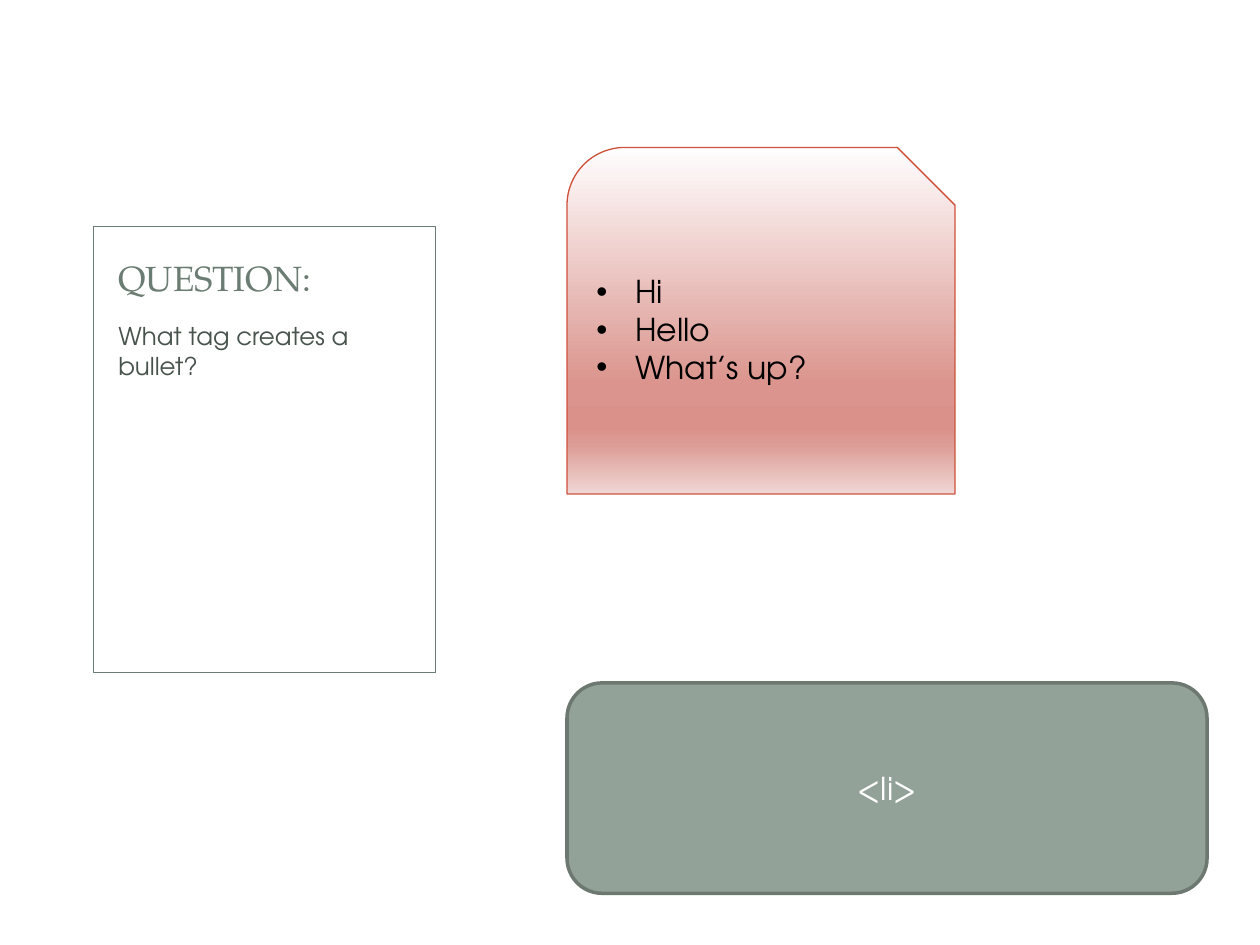
from lxml import etree
from pptx import Presentation
from pptx import util as u
from pptx.dml.color import RGBColor
from pptx.enum import shapes, text
from pptx.oxml.ns import qn

SANS, SERIF = "TeX Gyre Adventor", "TeX Gyre Pagella"
SHAPE, ALIGN, ANCHOR = shapes.MSO_SHAPE, text.PP_ALIGN, text.MSO_ANCHOR


def rgb(value):
    return RGBColor.from_string(value)


def place(sp, box):
    sp.left, sp.top, sp.width, sp.height = map(u.Inches, box)


def add_box(s, kind, box, line, weight, fill=None):
    sp = s.shapes.add_shape(kind, *map(u.Inches, box))
    sp.shadow.inherit = False
    sp.line.color.rgb = rgb(line)
    sp.line.width = u.Pt(weight)
    if fill:
        sp.fill.solid()
        sp.fill.fore_color.rgb = rgb(fill)
    return sp


def set_gradient(sp, stops):
    """Fill from top to bottom with (percent, colour) stops."""
    sp.fill.gradient()
    sp.fill.gradient_angle = 270
    stop_list = sp.fill._xPr.find(qn("a:gradFill")).find(qn("a:gsLst"))
    for old in list(stop_list):
        stop_list.remove(old)
    for percent, color in stops:
        gs = etree.SubElement(stop_list, qn("a:gs"), pos=str(percent * 1000))
        etree.SubElement(gs, qn("a:srgbClr"), val=color)


def add_bullet(p, indent):
    pPr = p._p.get_or_add_pPr()
    pPr.set("marL", str(u.Inches(indent)))
    pPr.set("indent", str(u.Inches(-indent)))
    etree.SubElement(pPr, qn("a:buFont"), typeface="Arial")
    etree.SubElement(pPr, qn("a:buChar"), char="•")


def write(sp, lines, size, color, font=SANS, align=ALIGN.LEFT,
          anchor=ANCHOR.MIDDLE, before=0, bullets=False):
    tf = sp.text_frame
    tf.word_wrap = True
    tf.auto_size = text.MSO_AUTO_SIZE.NONE
    tf.vertical_anchor = anchor
    for i, line in enumerate(lines):
        p = tf.add_paragraph() if i else tf.paragraphs[0]
        p.alignment = align
        p.space_before = u.Pt(before)
        if bullets:
            add_bullet(p, 0.31)
        r = p.add_run()
        r.text = line
        r.font.size = u.Pt(size)
        r.font.name = font
        r.font.color.rgb = rgb(color)


def main():
    prs = Presentation()
    prs.slide_width, prs.slide_height = u.Inches(10), u.Inches(7.5)
    s = prs.slides.add_slide(prs.slide_layouts[5])

    # Question card: frame, heading and question
    add_box(s, SHAPE.RECTANGLE, (0.74, 1.8, 2.72, 3.54), "6B7D72", 0.5, "FFFFFF")
    title = s.shapes.title
    place(title, (0.84, 1.9, 2.51, 0.52))
    write(title, ["QUESTION:"], 20, "6B7D72", SERIF, anchor=ANCHOR.BOTTOM)
    s.shapes._spTree.append(title._element)  # bring in front of the frame
    question = s.shapes.add_textbox(*map(u.Inches, (0.84, 2.5, 2.51, 2.75)))
    write(question, ["What tag creates a bullet?"], 14, "47534C",
          anchor=ANCHOR.TOP, before=4)

    # Answer
    answer = add_box(s, SHAPE.ROUNDED_RECTANGLE, (4.5, 5.42, 5.08, 1.67),
                     "6D7871", 2, "93A299")
    write(answer, ["<li>"], 18, "FFFFFF", align=ALIGN.CENTER)

    # Example list
    example = add_box(s, SHAPE.SNIP_ROUND_RECTANGLE, (4.5, 1.17, 3.08, 2.75),
                      "CE503A", 0.75)
    set_gradient(example, [(0, "FFFEFE"), (68, "DB958E"), (81, "DA918A"),
                           (86, "DD9D97"), (100, "F0D7D5")])
    write(example, ["Hi", "Hello", "What’s up?"], 18, "000000", bullets=True)

    prs.save("out.pptx")


if __name__ == "__main__":
    main()
